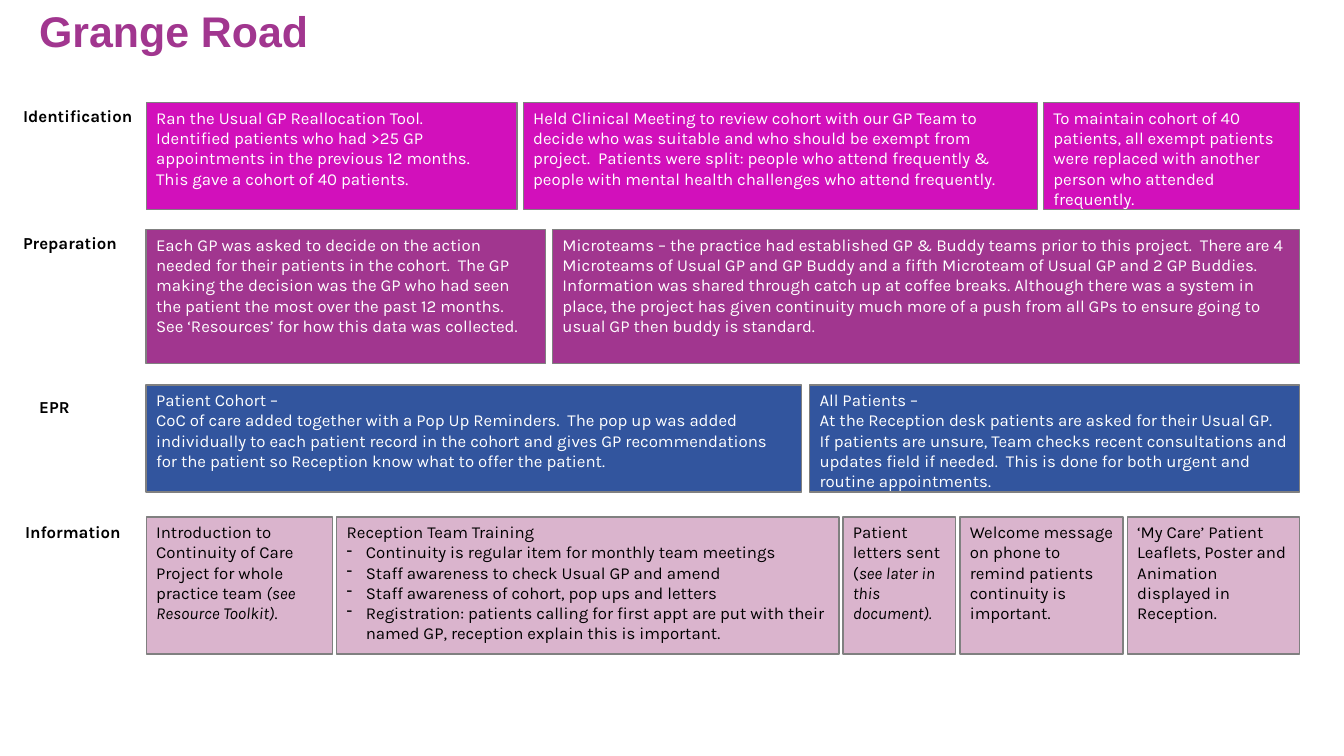
from dataclasses import dataclass

from lxml import etree
from pptx import Presentation
from pptx import util as u
from pptx.dml import color
from pptx.enum import shapes, text
from pptx.oxml import ns


@dataclass(frozen=True)
class Theme:
    heading_font: str = "Arial"
    body_font: str = "Karla"
    heading_size: float = 30.6
    body_size: float = 12
    magenta: str = "D210BB"
    purple: str = "A1368F"
    blue: str = "32559E"
    pink: str = "DAB4CD"
    outline: str = "808080"
    white: str = "FFFFFF"
    black: str = "000000"


@dataclass(frozen=True)
class Span:
    words: str
    italic: bool = False


@dataclass(frozen=True)
class Para:
    spans: tuple[Span, ...]
    dashed: bool = False


@dataclass(frozen=True)
class Card:
    width: float
    paras: tuple[Para, ...]


@dataclass(frozen=True)
class Label:
    words: str
    left: float
    top: float
    width: float
    height: float


@dataclass(frozen=True)
class Row:
    label: Label
    top: float
    height: float
    fill: str
    ink: str
    cards: tuple[Card, ...]


@dataclass(frozen=True)
class Style:
    font: str
    size: float
    ink: str
    bold: bool = False


THEME = Theme()
CARDS_LEFT, CARDS_WIDTH = 1.45, 11.44
DASH_INDENT = 0.19


def line(words: str, dashed: bool = False) -> Para:
    return Para((Span(words),), dashed)


def card(width: float, *lines: str) -> Card:
    return Card(width, tuple(line(words) for words in lines))


ROWS = (
    Row(Label("Identification", 0.13, 1, 1.31, 1.11), 1.02, 1.06, THEME.magenta, THEME.white, (
        card(3.68, "Ran the Usual GP Reallocation Tool.",
             "Identified patients who had >25 GP appointments in the previous 12 months.  "
             "This gave a cohort of 40 patients."),
        card(5.1, "Held Clinical Meeting to review cohort with our GP Team to decide who was "
             "suitable and who should be exempt from project.  Patients were split: people who "
             "attend frequently & people with mental health challenges who attend frequently."),
        card(2.54, "To maintain cohort of 40 patients, all exempt patients were replaced with "
             "another person who attended frequently."),
    )),
    Row(Label("Preparation", 0.13, 2.26, 1.31, 0.71), 2.28, 1.33, THEME.purple, THEME.white, (
        card(3.96, "Each GP was asked to decide on the action needed for their patients in the "
             "cohort.  The GP making the decision was the GP who had seen the patient the most "
             "over the past 12 months.  See ‘Resources’ for how this data was collected."),
        card(7.41, "Microteams – the practice had established GP & Buddy teams prior to this "
             "project.  There are 4 Microteams of Usual GP and GP Buddy and a fifth Microteam of "
             "Usual GP and 2 GP Buddies.  Information was shared through catch up at coffee "
             "breaks. Although there was a system in place, the project has given continuity "
             "much more of a push from all GPs to ensure going to usual GP then buddy is "
             "standard."),
    )),
    Row(Label("EPR", 0.29, 3.89, 0.75, 0.71), 3.82, 1.06, THEME.blue, THEME.white, (
        card(6.5, "Patient Cohort –",
             "CoC of care added together with a Pop Up Reminders.  The pop up was added "
             "individually to each patient record in the cohort and gives GP recommendations for "
             "the patient so Reception know what to offer the patient."),
        card(4.86, "All Patients –",
             "At the Reception desk patients are asked for their Usual GP.  If patients are "
             "unsure, Team checks recent consultations and updates field if needed.  This is "
             "done for both urgent and routine appointments."),
    )),
    Row(Label("Information", 0.15, 5.13, 1.3, 0.71), 5.13, 1.36, THEME.pink, THEME.black, (
        Card(1.85, (Para((
            Span("Introduction to Continuity of Care Project for whole practice team "),
            Span("(see Resource Toolkit)", italic=True),
            Span("."))),)),
        Card(4.98, (
            line("Reception Team Training"),
            line("Continuity is regular item for monthly team meetings", dashed=True),
            line("Staff awareness to check Usual GP and amend", dashed=True),
            line("Staff awareness of cohort, pop ups and letters", dashed=True),
            line("Registration: patients calling for first appt are put with their named GP, "
                 "reception explain this is important.", dashed=True))),
        Card(1.12, (Para((
            Span("Patient letters sent ("),
            Span("see later in this document).", italic=True))),)),
        card(1.62, "Welcome message on phone to remind patients continuity is important."),
        card(1.71, "‘My Care’ Patient Leaflets, Poster and Animation displayed in Reception."),
    )),
)


def add_dash(para) -> None:
    properties = para._p.get_or_add_pPr()
    properties.set("marL", str(u.Inches(DASH_INDENT)))
    properties.set("indent", str(-u.Inches(DASH_INDENT)))
    etree.SubElement(properties, ns.qn("a:buChar"), char="-")


def write(box, paras: tuple[Para, ...], style: Style) -> None:
    frame = box.text_frame
    frame.word_wrap = True
    frame.vertical_anchor = text.MSO_ANCHOR.TOP
    for index, content in enumerate(paras):
        para = frame.add_paragraph() if index else frame.paragraphs[0]
        para.alignment = text.PP_ALIGN.LEFT
        if content.dashed:
            add_dash(para)
        for span in content.spans:
            run = para.add_run()
            run.text = span.words
            run.font.name = style.font
            run.font.size = u.Pt(style.size)
            run.font.bold = style.bold
            run.font.italic = span.italic
            run.font.color.rgb = color.RGBColor.from_string(style.ink)


def add_label(page, label: Label, style: Style):
    box = page.shapes.add_textbox(*map(u.Inches, (label.left, label.top, label.width, label.height)))
    write(box, (line(label.words),), style)
    return box


def add_card(page, row: Row, content: Card, left: float) -> None:
    box = page.shapes.add_shape(shapes.MSO_SHAPE.RECTANGLE,
                                *map(u.Inches, (left, row.top, content.width, row.height)))
    box.shadow.inherit = False
    box.fill.solid()
    box.fill.fore_color.rgb = color.RGBColor.from_string(row.fill)
    box.line.color.rgb = color.RGBColor.from_string(THEME.outline)
    box.line.width = u.Pt(1)
    write(box, content.paras, Style(THEME.body_font, THEME.body_size, row.ink))


def add_row(page, row: Row) -> None:
    add_label(page, row.label, Style(THEME.body_font, THEME.body_size, THEME.black, bold=True))
    # Cards share the row width, with equal gaps between them
    spare = CARDS_WIDTH - sum(content.width for content in row.cards)
    gap = spare / (len(row.cards) - 1)
    left = CARDS_LEFT
    for content in row.cards:
        add_card(page, row, content, left)
        left += content.width + gap


def main() -> None:
    deck = Presentation()
    deck.slide_width, deck.slide_height = u.Inches(13.33), u.Inches(7.5)
    page = deck.slides.add_slide(deck.slide_layouts[6])

    # Heading
    heading = add_label(page, Label("Grange Road", 0.29, 0.06, 10.74, 0.55),
                        Style(THEME.heading_font, THEME.heading_size, THEME.purple, bold=True))
    heading.text_frame.vertical_anchor = text.MSO_ANCHOR.MIDDLE
    heading.text_frame.paragraphs[0].line_spacing = 0.9

    # Project stages
    for row in ROWS:
        add_row(page, row)

    deck.save("out.pptx")


if __name__ == "__main__":
    main()
